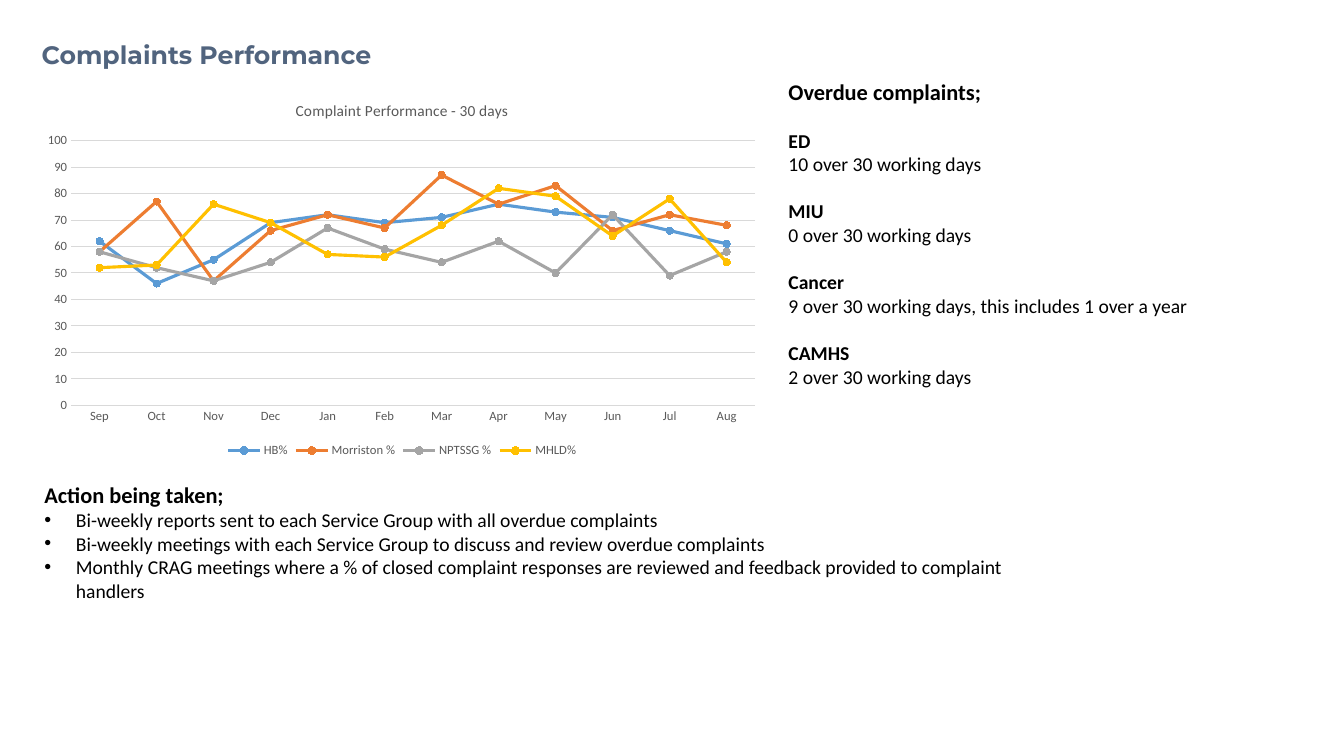
from lxml.etree import SubElement
from pptx import Presentation
from pptx.chart.data import CategoryChartData
from pptx.dml.color import RGBColor
from pptx.enum.chart import XL_CHART_TYPE, XL_LEGEND_POSITION, XL_MARKER_STYLE, XL_TICK_MARK
from pptx.enum.text import MSO_ANCHOR, MSO_AUTO_SIZE, PP_ALIGN
from pptx.oxml import parse_xml
from pptx.oxml.ns import nsdecls, qn
from pptx.util import Pt

SLATE = RGBColor(0x51, 0x64, 0x7E)
BLACK = RGBColor(0, 0, 0)
GREY = RGBColor(0x59, 0x59, 0x59)
PALE = RGBColor(0xD9, 0xD9, 0xD9)
BLUE = RGBColor(0x5B, 0x9B, 0xD5)
ORANGE = RGBColor(0xED, 0x7D, 0x31)
SILVER = RGBColor(0xA5, 0xA5, 0xA5)
GOLD = RGBColor(0xFF, 0xC0, 0x00)

MONTHS = ["Sep", "Oct", "Nov", "Dec", "Jan", "Feb",
          "Mar", "Apr", "May", "Jun", "Jul", "Aug"]
SERIES = [
    ("HB%", BLUE, [62, 46, 55, 69, 72, 69, 71, 76, 73, 71, 66, 61]),
    ("Morriston %", ORANGE, [58, 77, 47, 66, 72, 67, 87, 76, 83, 66, 72, 68]),
    ("NPTSSG %", SILVER, [58, 52, 47, 54, 67, 59, 54, 62, 50, 72, 49, 58]),
    ("MHLD%", GOLD, [52, 53, 76, 69, 57, 56, 68, 82, 79, 64, 78, 54]),
]
OVERDUE = [
    ("ED", "10 over 30 working days"),
    ("MIU", "0 over 30 working days"),
    ("Cancer", "9 over 30 working days, this includes 1 over a year"),
    ("CAMHS", "2 over 30 working days"),
]
ACTIONS = [
    "Bi-weekly reports sent to each Service Group with all overdue complaints",
    "Bi-weekly meetings with each Service Group to discuss and review overdue complaints",
    "Monthly CRAG meetings where a % of closed complaint responses are reviewed "
    "and feedback provided to complaint handlers",
]


def style(font, size, color, bold=False, name="Calibri"):
    font.name = name
    font.size = Pt(size)
    font.bold = bold
    font.color.rgb = color


def place(shape, left, top, width, height):
    shape.left, shape.top = Pt(left), Pt(top)
    shape.width, shape.height = Pt(width), Pt(height)
    frame = shape.text_frame
    frame.word_wrap = True
    frame.auto_size = MSO_AUTO_SIZE.NONE
    frame.vertical_anchor = MSO_ANCHOR.TOP
    return frame


def fill_list(frame, lines):
    frame.text = "\n".join(text for text, *_ in lines)
    for para, (_, size, bold, gap, bullet) in zip(frame.paragraphs, lines):
        para.space_before = Pt(gap)
        style(para.runs[0].font, size, BLACK, bold)
        props = para._p.get_or_add_pPr()
        indent = Pt(22.5) if bullet else 0
        props.set("marL", str(indent))
        props.set("indent", str(-indent))
        if bullet:
            SubElement(props, qn("a:buFont")).set("typeface", "Arial")
            SubElement(props, qn("a:buChar")).set("char", "•")
        else:
            SubElement(props, qn("a:buNone"))


def add_title(shape):
    frame = place(shape, 22.5, 24.5, 698, 29)
    frame.text = "Complaints Performance"
    para = frame.paragraphs[0]
    para.alignment = PP_ALIGN.LEFT
    style(para.runs[0].font, 18, SLATE, True, "Montserrat")


def add_overdue(shape):
    lines = [("Overdue complaints;", 16, True, 0, False)]
    for team, count in OVERDUE:
        lines += [(team, 14, True, 17, False), (count, 14, False, 0, False)]
    fill_list(place(shape, 556, 52, 382, 230), lines)


def add_actions(shape):
    lines = [("Action being taken;", 16, True, 0, False)]
    lines += [(text, 14, False, 0, True) for text in ACTIONS]
    fill_list(place(shape, 24.5, 340, 740, 94), lines)


def format_axis(axis):
    axis.major_tick_mark = XL_TICK_MARK.NONE
    axis.minor_tick_mark = XL_TICK_MARK.NONE
    style(axis.tick_labels.font, 9, GREY)


def set_plot(chart, x, y, w, h):
    area = chart._chartSpace.chart.plotArea
    for old in area.findall(qn("c:layout")):
        area.remove(old)
    parts = "".join(f'<c:{tag} val="{val}"/>' for tag, val in [
        ("layoutTarget", "inner"), ("xMode", "edge"), ("yMode", "edge"),
        ("x", x), ("y", y), ("w", w), ("h", h)])
    area.insert(0, parse_xml(
        f'<c:layout {nsdecls("c")}><c:manualLayout>{parts}</c:manualLayout></c:layout>'))


def add_trend(slide):
    data = CategoryChartData()
    data.categories = MONTHS
    for name, _, values in SERIES:
        data.add_series(name, values)
    chart = slide.shapes.add_chart(
        XL_CHART_TYPE.LINE_MARKERS, Pt(24.5), Pt(60), Pt(525.5), Pt(270), data).chart
    style(chart.font, 10, BLACK)

    chart.has_title = True
    title = chart.chart_title
    title.include_in_layout = False
    title.text_frame.text = "Complaint Performance - 30 days"
    style(title.text_frame.paragraphs[0].runs[0].font, 11, GREY)

    chart.has_legend = True
    chart.legend.position = XL_LEGEND_POSITION.BOTTOM
    chart.legend.include_in_layout = False
    style(chart.legend.font, 9, GREY)

    months, scale = chart.category_axis, chart.value_axis
    format_axis(months)
    months.format.line.color.rgb = PALE
    months.format.line.width = Pt(0.75)
    format_axis(scale)
    scale.format.line.fill.background()
    scale.minimum_scale, scale.maximum_scale, scale.major_unit = 0, 100, 10
    scale.major_gridlines.format.line.color.rgb = PALE
    scale.major_gridlines.format.line.width = Pt(0.75)

    plot = chart.plots[0]
    plot.vary_by_categories = False
    for series, (_, color, _) in zip(plot.series, SERIES):
        series.smooth = False
        series.format.line.color.rgb = color
        series.format.line.width = Pt(2.25)
        marker = series.marker
        marker.style = XL_MARKER_STYLE.CIRCLE
        marker.size = 5
        marker.format.fill.solid()
        marker.format.fill.fore_color.rgb = color
        marker.format.line.color.rgb = color
    set_plot(chart, 0.05, 0.15, 0.93, 0.7)


def main():
    deck = Presentation()
    deck.slide_width, deck.slide_height = Pt(960), Pt(540)
    slide = deck.slides.add_slide(deck.slide_layouts[3])
    title, overdue, actions = slide.placeholders
    add_title(title)
    add_overdue(overdue)
    add_actions(actions)
    add_trend(slide)
    deck.save("out.pptx")


if __name__ == "__main__":
    main()
